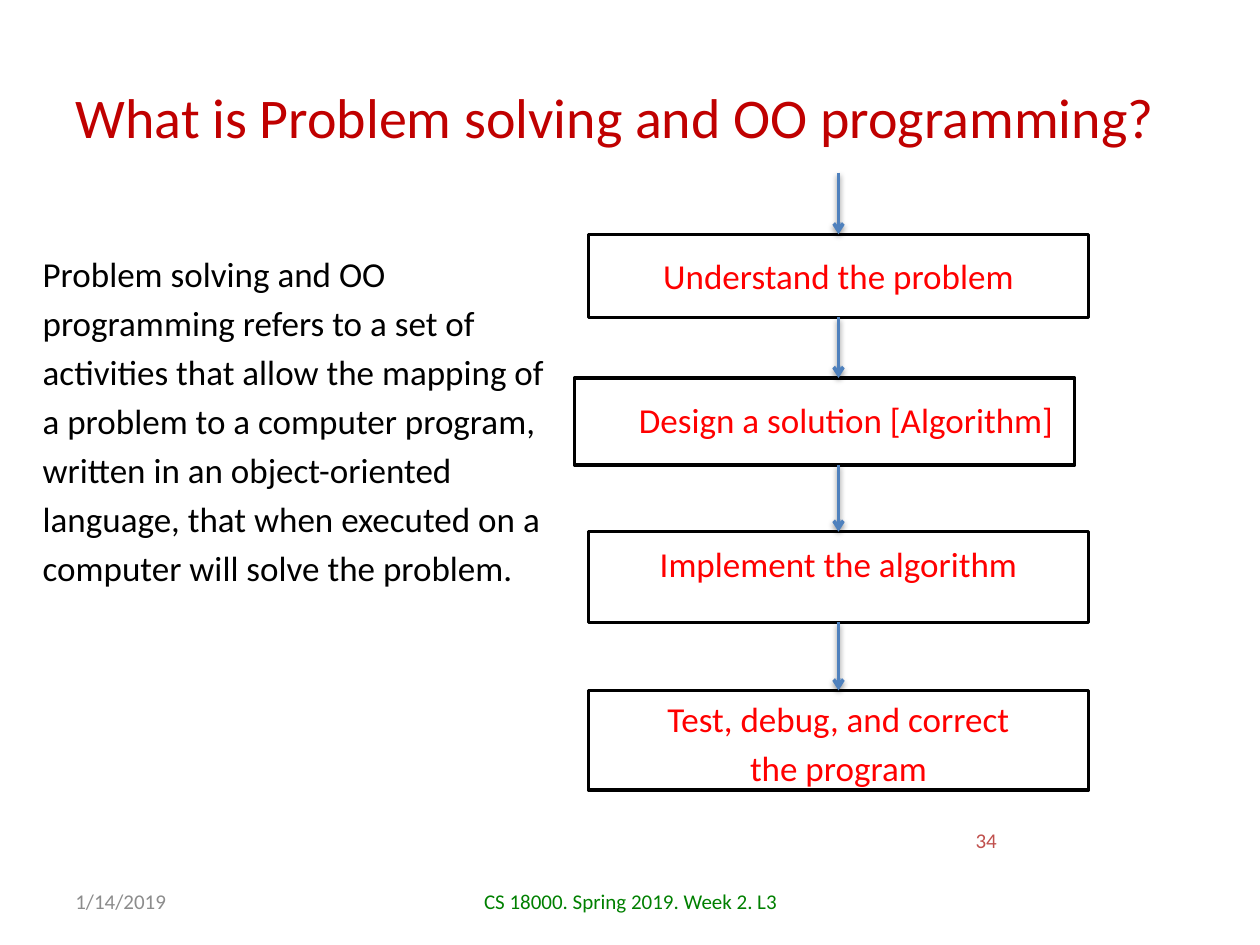
from dataclasses import dataclass

from lxml.etree import SubElement
from pptx import Presentation
from pptx.dml.color import RGBColor as RGB
from pptx.enum.shapes import MSO_CONNECTOR as Connector, MSO_SHAPE as Shape
from pptx.enum.text import MSO_ANCHOR as Anchor, PP_ALIGN as Align
from pptx.oxml.ns import qn
from pptx.util import Inches, Pt

COL, ROW = Inches(10) // 100, Inches(7.5) // 100


@dataclass(frozen=True)
class Theme:
    font: str = "Calibri"
    title_size: int = 32
    text_size: int = 20
    footer_size: int = 12
    leading: int = 28
    stroke: int = 2
    title: str = "C00000"
    text: str = "000000"
    step: str = "FF0000"
    arrow: str = "4F81BD"
    paper: str = "FFFFFF"
    number: str = "C0504D"
    course: str = "008000"
    date: str = "8C8C8C"


@dataclass(frozen=True)
class Box:
    x: float
    y: float
    w: float
    h: float

    def inner(self, x, y, w, h):
        return Box(self.x + x, self.y + y, w, h)

    def emu(self):
        return [round(v) for v in (self.x * COL, self.y * ROW, self.w * COL, self.h * ROW)]


THEME = Theme()


def write(sp, text, size, color, align=Align.LEFT, anchor=Anchor.TOP, leading=None):
    tf = sp.text_frame
    tf.word_wrap = True
    tf.vertical_anchor = anchor
    p = tf.paragraphs[0]
    p.text = text
    p.alignment = align
    if leading:
        p.line_spacing = Pt(leading)
    p.font.name = THEME.font
    p.font.size = Pt(size)
    p.font.color.rgb = RGB.from_string(color)


def add_label(s, box, *args, **style):
    write(s.shapes.add_textbox(*box.emu()), *args, **style)


def add_title(s, box):
    sp = s.shapes.title
    sp.left, sp.top, sp.width, sp.height = box.emu()
    write(sp, "What is Problem solving and OO programming?",
          THEME.title_size, THEME.title, anchor=Anchor.MIDDLE)


def add_definition(s, box):
    add_label(s, box,
              "Problem solving and OO programming refers to a set of activities that allow "
              "the mapping of a problem to a computer program, written in an object-oriented "
              "language, that when executed on a computer will solve the problem.",
              THEME.text_size, THEME.text, leading=THEME.leading)


def add_step(s, box):
    sp = s.shapes.add_shape(Shape.RECTANGLE, *box.emu())
    sp.shadow.inherit = False
    sp.fill.solid()
    sp.fill.fore_color.rgb = RGB.from_string(THEME.paper)
    sp.line.color.rgb = RGB.from_string(THEME.text)
    sp.line.width = Pt(THEME.stroke)
    return sp


def add_arrow(s, x, top, bottom):
    arrow = s.shapes.add_connector(Connector.STRAIGHT, x, top, x, bottom)
    arrow.line.color.rgb = RGB.from_string(THEME.arrow)
    arrow.line.width = Pt(THEME.stroke)
    props = arrow._element.spPr
    SubElement(props.find(qn("a:ln")), qn("a:tailEnd"), type="arrow")
    effects = SubElement(props, qn("a:effectLst"))
    shadow = SubElement(effects, qn("a:outerShdw"), blurRad=str(int(Pt(3.1))),
                        dist=str(int(Pt(1.6))), dir="5400000", rotWithShape="0")
    color = SubElement(shadow, qn("a:srgbClr"), val=THEME.text)
    SubElement(color, qn("a:alpha"), val="38000")
    return arrow


def add_flow(s, box):
    steps = [
        ("Understand the problem", (1.1, 6.53, 39.7, 8.8), (4.2, 8, 33.5, 5.87), None),
        ("Design a solution [Algorithm]", (0, 21.73, 39.7, 9.2), (1.1, 22.53, 40.9, 6.27),
         THEME.leading),
        ("Implement the algorithm", (1.1, 38, 39.7, 9.6), (4.2, 38.53, 33.5, 5.87), None),
        ("Test, debug, and correct the program", (1.1, 54.8, 39.7, 10.53),
         (5.8, 54.13, 30.3, 11.73), THEME.leading),
    ]
    axis = round((box.x + 20.95) * COL)
    previous, start = None, round(box.y * ROW)
    for text, frame, label, leading in steps:
        sp = add_step(s, box.inner(*frame))
        add_label(s, box.inner(*label), text, THEME.text_size, THEME.step,
                  align=Align.CENTER, leading=leading)
        arrow = add_arrow(s, axis, start, sp.top)
        centred = frame[0] > 0
        if previous is not None:
            arrow.begin_connect(previous, 2)
        if centred:
            arrow.end_connect(sp, 0)
        previous, start = (sp if centred else None), sp.top + sp.height


def add_footer(s, box):
    items = [
        ("34", (51.8, 0, 23.3, 5.33), THEME.number, Align.RIGHT),
        ("CS 18000. Spring 2019. Week 2. L3", (29.2, 6.4, 31.7, 5.33), THEME.course,
         Align.CENTER),
        ("1/14/2019", (0, 6.4, 23.3, 5.33), THEME.date, Align.LEFT),
    ]
    for text, frame, color, align in items:
        add_label(s, box.inner(*frame), text, THEME.footer_size, color,
                  align=align, anchor=Anchor.MIDDLE)


def main():
    prs = Presentation()
    prs.slide_width, prs.slide_height = 100 * COL, 100 * ROW
    s = prs.slides.add_slide(prs.slide_layouts[5])
    add_title(s, Box(5, 4, 90, 16.67))
    add_definition(s, Box(2.4, 25.33, 43.1, 37.87))
    add_flow(s, Box(45.6, 18.27, 42, 65.87))
    add_footer(s, Box(5, 86.27, 90, 11.73))
    prs.save("out.pptx")


if __name__ == "__main__":
    main()
